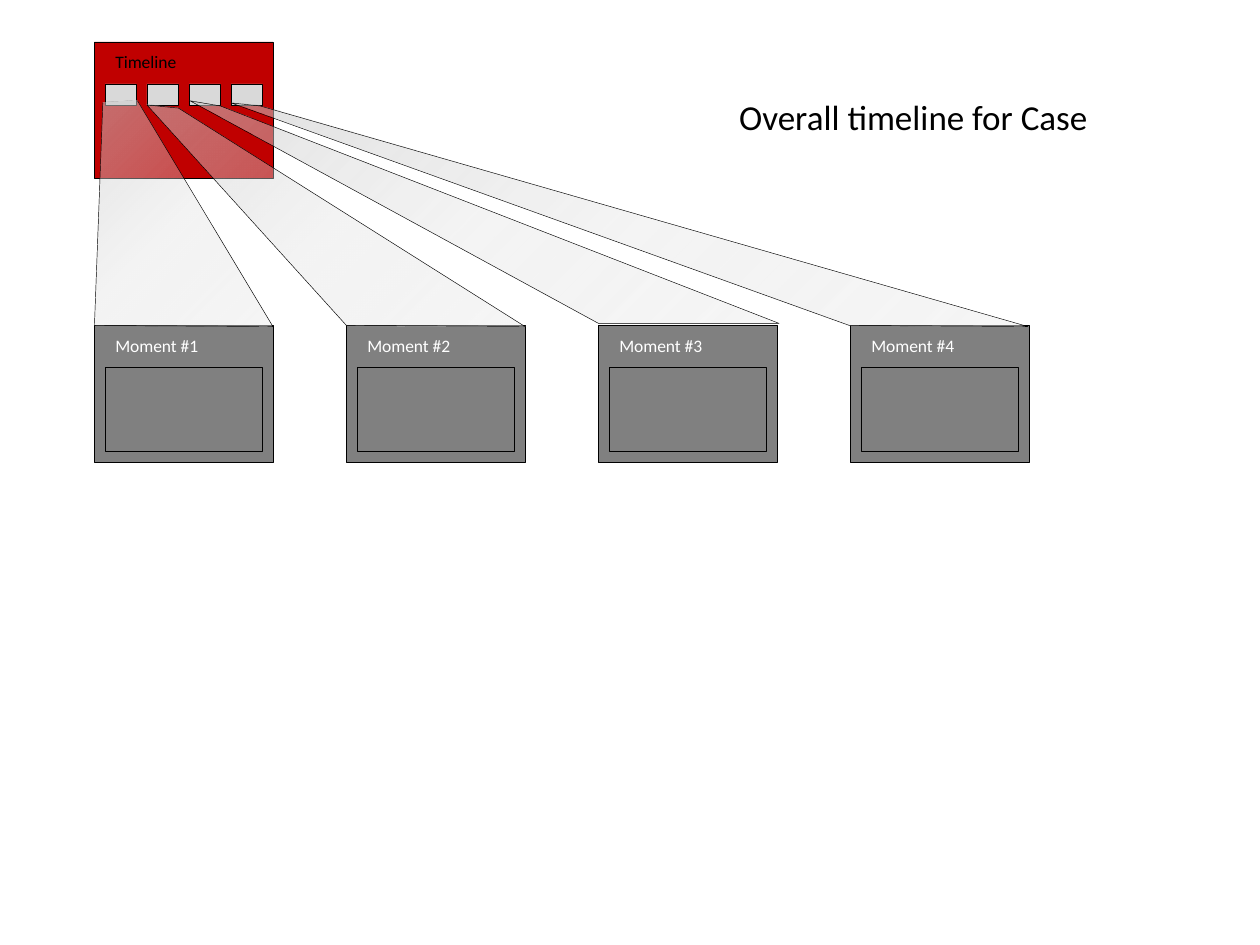
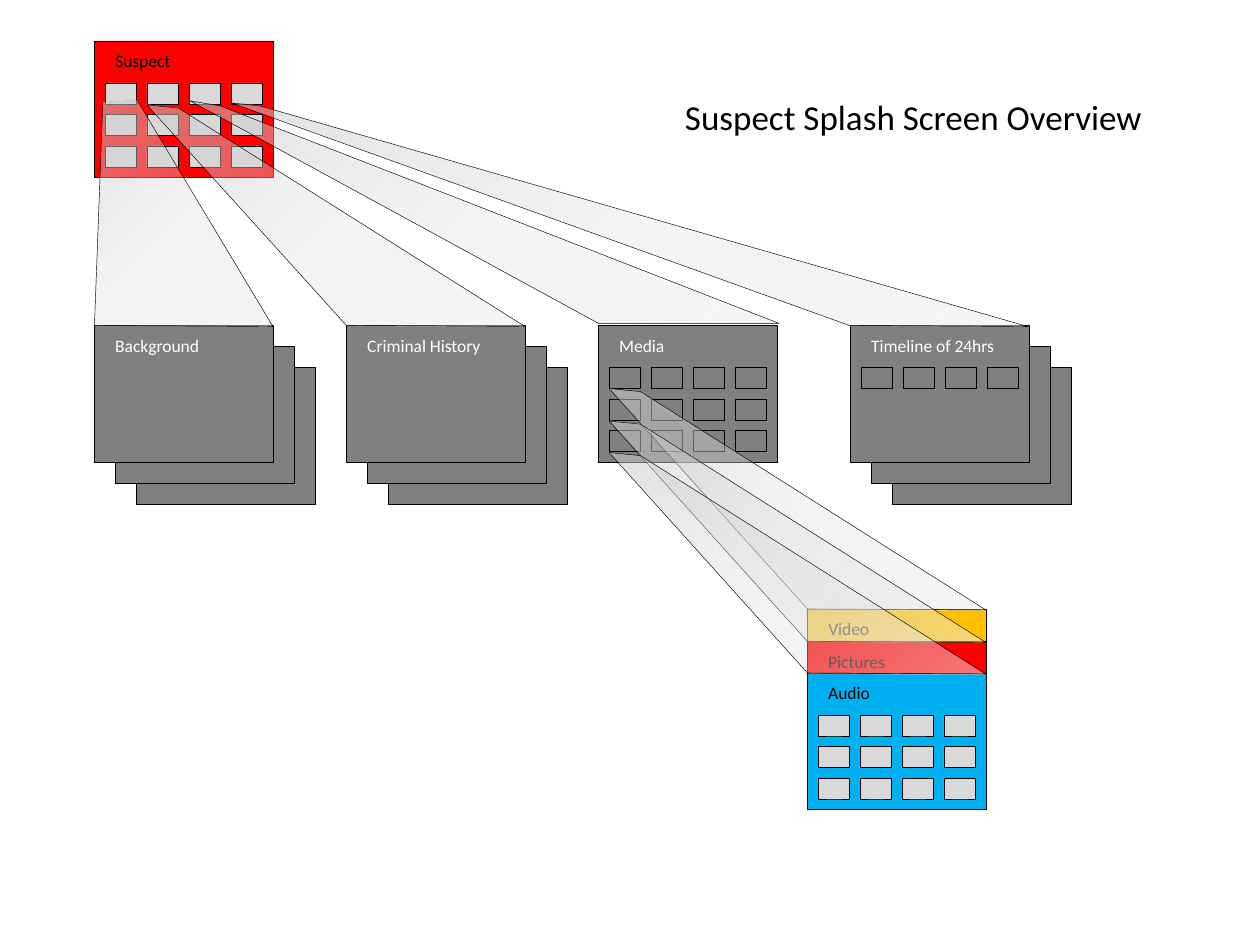
from itertools import product

from pptx import Presentation, util as u
from pptx.dml.color import RGBColor
from pptx.enum import shapes, text
from pptx.oxml import parse_xml
from pptx.oxml.ns import nsdecls, qn

PX = u.Inches(1) // 120
FONT = "Calibri"
BLACK = RGBColor(0x00, 0x00, 0x00)
WHITE = RGBColor(0xFF, 0xFF, 0xFF)
GREY = RGBColor(0x80, 0x80, 0x80)
LIGHT_GREY = RGBColor(0xD9, 0xD9, 0xD9)
DARK_RED = RGBColor(0xC0, 0x00, 0x00)
RED = RGBColor(0xFF, 0x00, 0x00)
AMBER = RGBColor(0xFF, 0xC0, 0x00)
BLUE = RGBColor(0x00, 0xB0, 0xF0)

CARD_WIDTH, CARD_HEIGHT = 170, 130
ROW_LEFT, ROW_TOP, ROW_PITCH = 90, 310, 240
BEAM_STOPS = [(0, "CACACA", 55), (50, "DDDDDD", 32), (100, "EEEEEE", 50)]
TOP_BEAMS = [
    [(98, 98), (90, 310), (260, 311), (131, 96)],
    [(220, 98), (809, 310), (979, 311), (248, 101)],
    [(140, 100), (330, 310), (500, 311), (170, 103)],
    [(181, 96), (570, 308), (742, 308), (210, 101)],
]


def scaled(*lengths):
    """Turn px lengths into EMU."""
    return [length * PX for length in lengths]


def add_outline(shape):
    """Give a shape the thin black outline and no shadow."""
    shape.shadow.inherit = False
    shape.line.color.rgb = BLACK
    shape.line.width = u.Pt(0.25)


def add_box(page, left, top, width, height, colour):
    """Draw an outlined rectangle."""
    box = page.shapes.add_shape(
        shapes.MSO_SHAPE.RECTANGLE, *scaled(left, top, width, height))
    box.fill.solid()
    box.fill.fore_color.rgb = colour
    add_outline(box)


def add_card(page, left, top, colour):
    """Draw one screen card."""
    add_box(page, left, top, CARD_WIDTH, CARD_HEIGHT, colour)


def add_label(page, left, top, width, words, colour=BLACK, fill=None):
    """Write the heading of the card at left, top."""
    box = page.shapes.add_textbox(*scaled(left + 8, top + 3, width, 32))
    if fill is not None:
        box.fill.solid()
        box.fill.fore_color.rgb = fill
    frame = box.text_frame
    frame.word_wrap = False
    frame.auto_size = text.MSO_AUTO_SIZE.SHAPE_TO_FIT_TEXT
    frame.text = words
    set_font(frame.paragraphs[0], 10, colour)


def set_font(para, size, colour):
    """Set the font of a paragraph."""
    para.font.name = FONT
    para.font.size = u.Pt(size)
    para.font.color.rgb = colour


def add_tiles(page, left, top, rows, colour):
    """Draw rows of four tiles inside the card at left, top."""
    for column, row in product(range(4), range(rows)):
        add_box(page, left + 10 + 40 * column, top + 40 + 30 * row, 30, 20, colour)


def add_beam(page, points, close=True):
    """Draw a translucent beam that links a tile to a card."""
    builder = page.shapes.build_freeform(*points[0], scale=PX)
    builder.add_line_segments(points[1:], close=close)
    beam = builder.convert_to_shape()
    add_outline(beam)
    beam.fill.gradient()
    beam.fill.gradient_angle = 315
    stops = beam.element.spPr.find(qn("a:gradFill")).find(qn("a:gsLst"))
    for stop in list(stops):
        stops.remove(stop)
    for position, colour, opacity in BEAM_STOPS:
        stops.append(parse_xml(
            f'<a:gs {nsdecls("a")} pos="{position * 1000}"><a:srgbClr val="{colour}">'
            f'<a:alpha val="{opacity * 1000}"/></a:srgbClr></a:gs>'))


def add_top_beams(page):
    """Draw the beams from the top card to the row of cards."""
    for number, points in enumerate(TOP_BEAMS):
        add_beam(page, points, close=number > 0)


def add_page(deck, words):
    """Add a slide with its title at the upper right."""
    page = deck.slides.add_slide(deck.slide_layouts[5])
    title = page.shapes.title
    title.left, title.top, title.width, title.height = scaled(600, 36, 540, 150)
    frame = title.text_frame
    frame.text = words
    frame.vertical_anchor = text.MSO_ANCHOR.MIDDLE
    para = frame.paragraphs[0]
    para.alignment = text.PP_ALIGN.CENTER
    set_font(para, 20, BLACK)
    return page


def build_timeline(deck):
    """Build the case timeline with its four moments."""
    page = add_page(deck, "Overall timeline for Case")
    add_card(page, ROW_LEFT, 40, DARK_RED)
    add_tiles(page, ROW_LEFT, 40, 1, LIGHT_GREY)
    add_label(page, ROW_LEFT, 40, 83, "Timeline")
    for number in range(4):
        left = ROW_LEFT + ROW_PITCH * number
        add_card(page, left, ROW_TOP, GREY)
        add_box(page, left + 10, ROW_TOP + 40, 150, 80, GREY)
        add_label(page, left, ROW_TOP, 104, f"Moment #{number + 1}", WHITE, GREY)
    add_top_beams(page)


def build_suspect(deck):
    """Build the suspect overview with its topics and media."""
    page = add_page(deck, "Suspect Splash Screen Overview")
    add_card(page, ROW_LEFT, 39, RED)
    add_tiles(page, ROW_LEFT, 39, 3, LIGHT_GREY)
    add_label(page, ROW_LEFT, 39, 78, "Suspect")

    topics = [
        ("Background", 106, (40, 20), 0),
        ("Criminal History", 137, (40, 20), 0),
        ("Media", 67, (), 3),
        ("Timeline of 24hrs", 146, (40, 20), 1),
    ]
    for number, (words, width, offsets, tile_rows) in enumerate(topics):
        left = ROW_LEFT + ROW_PITCH * number
        for offset in (*offsets, 0):
            add_card(page, left + offset, ROW_TOP + offset, GREY)
        add_tiles(page, left, ROW_TOP, tile_rows, GREY)
        add_label(page, left, ROW_TOP, width, words, WHITE, GREY)
    add_top_beams(page)

    media_left = 769
    media = [
        ("Video", 64, 580, AMBER, 0),
        ("Pictures", 79, 611, RED, 0),
        ("Audio", 65, 641, BLUE, 3),
    ]
    for words, width, top, colour, tile_rows in media:
        add_card(page, media_left, top, colour)
        add_tiles(page, media_left, top, tile_rows, LIGHT_GREY)
        add_label(page, media_left, top, width, words)
        add_beam(page, [(580, top - 210), (media_left, top),
                        (media_left + CARD_WIDTH, top + 1), (610, top - 207)])


def main():
    """Build and save the deck."""
    deck = Presentation()
    deck.slide_width, deck.slide_height = scaled(1200, 900)
    build_timeline(deck)
    build_suspect(deck)
    deck.save("out.pptx")


if __name__ == "__main__":
    main()
